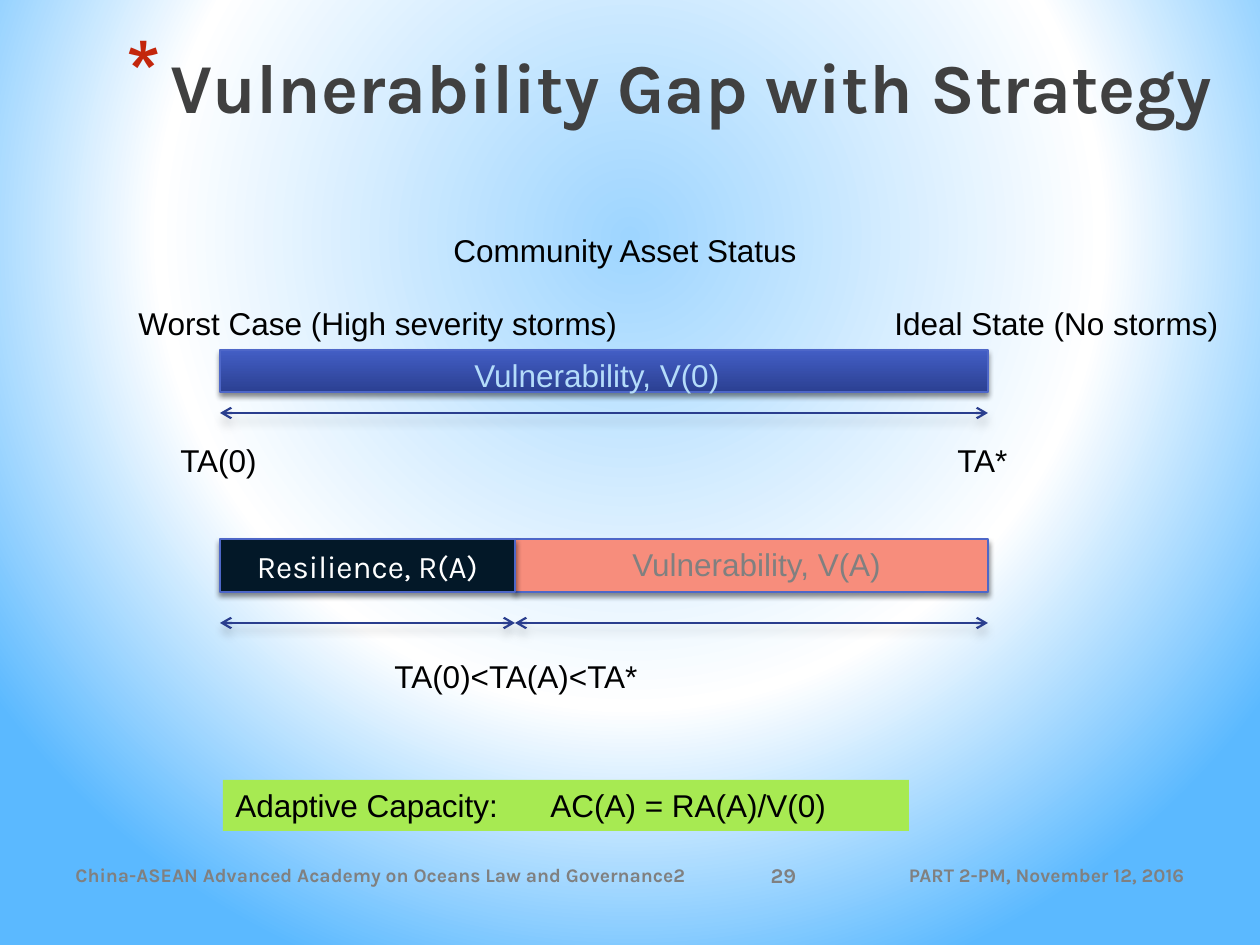
"""Build the vulnerability gap slide."""
from dataclasses import dataclass

from pptx import Presentation
from pptx.dml.color import RGBColor
from pptx.enum.shapes import MSO_CONNECTOR, MSO_SHAPE
from pptx.enum.text import MSO_ANCHOR, MSO_AUTO_SIZE, PP_ALIGN
from pptx.oxml import parse_xml
from pptx.oxml.ns import nsdecls, qn
from pptx.util import Emu, Pt

EMU_PER_PX = 914400 / 126
EMU_PER_PT = 12700


@dataclass(frozen=True)
class Theme:
    """Hold the colours, fonts and type sizes of the slide."""
    heading_font: str = "Karla"
    label_font: str = "Arial"
    title_size: int = 40
    label_size: int = 18
    number_size: int = 12
    footer_size: int = 11
    title: str = "404040"
    bullet: str = "C3260C"
    text: str = "000000"
    muted: str = "808080"
    pale: str = "B4DCFA"
    white: str = "FFFFFF"
    outline: str = "4E67C8"
    arrow: str = "2A3E8E"
    initial_gap: tuple = ("435EC5", "2B4092")
    remaining_gap: str = "F78D7C"
    resilience: str = "031828"
    capacity: str = "A7EA52"
    background: tuple = ((0, "9ED5FF"), (60, "FFFFFF"), (100, "5BB9FF"))


THEME = Theme()
BAR_LEFT, BAR_SPLIT, BAR_RIGHT = 220, 515, 988


def px(length):
    """Turn pixels into EMU."""
    return Emu(round(length * EMU_PER_PX))


def color(value):
    """Turn a hex string into a colour."""
    return RGBColor.from_string(value)


def add_span(para, text, size, ink, font=THEME.label_font, bold=False):
    """Append one formatted run to a paragraph."""
    span = para.add_run()
    span.text = text
    span.font.name = font
    span.font.size = Pt(size)
    span.font.bold = bold
    span.font.color.rgb = color(ink)


def add_shadow(element, alpha, blur, distance):
    """Give a shape or line a soft shadow that falls downwards."""
    element.spPr.append(parse_xml(
        f'<a:effectLst {nsdecls("a")}><a:outerShdw blurRad="{round(blur * EMU_PER_PT)}" '
        f'dist="{round(distance * EMU_PER_PT)}" dir="5400000" rotWithShape="0">'
        f'<a:srgbClr val="000000"><a:alpha val="{alpha * 1000}"/></a:srgbClr>'
        '</a:outerShdw></a:effectLst>'))


def paint_background(page):
    """Fill the page with a radial gradient."""
    page.background.fill.gradient()
    gradient = page.background._cSld.find(".//" + qn("a:gradFill"))
    stops = "".join(
        f'<a:gs pos="{position * 1000}"><a:srgbClr val="{value}"/></a:gs>'
        for position, value in THEME.background)
    gradient.getparent().replace(gradient, parse_xml(
        f'<a:gradFill {nsdecls("a")} rotWithShape="1"><a:gsLst>{stops}</a:gsLst>'
        '<a:path path="circle"><a:fillToRect l="20000" t="10000" r="20000" b="60000"/>'
        '</a:path></a:gradFill>'))


def set_title(page, text):
    """Place the title with its hanging asterisk."""
    title = page.shapes.title
    title.left, title.top, title.width, title.height = map(px, (44, 37, 1181, 157))
    frame = title.text_frame
    frame.auto_size = MSO_AUTO_SIZE.NONE
    frame.vertical_anchor = MSO_ANCHOR.TOP
    para = frame.paragraphs[0]
    para.alignment = PP_ALIGN.RIGHT
    properties = para._p.get_or_add_pPr()
    properties.set("marL", str(px(44)))
    properties.set("indent", str(-px(44)))
    for xml in (f'<a:buClr {nsdecls("a")}><a:srgbClr val="{THEME.bullet}"/></a:buClr>',
                f'<a:buSzPct {nsdecls("a")} val="128000"/>',
                f'<a:buChar {nsdecls("a")} char="*"/>'):
        properties.append(parse_xml(xml))
    add_span(para, text, THEME.title_size, THEME.title, THEME.heading_font, True)


def add_footer(page, text, left, width, alignment, size=THEME.footer_size):
    """Add one part of the footer line."""
    box = page.shapes.add_textbox(px(left), px(850), px(width), px(50))
    frame = box.text_frame
    frame.word_wrap = True
    frame.vertical_anchor = MSO_ANCHOR.MIDDLE
    para = frame.paragraphs[0]
    para.alignment = alignment
    add_span(para, text, size, THEME.muted, THEME.heading_font, True)


def add_label(page, text, left, top, width, ink=THEME.text, fill=None):
    """Add a one-line label that fits its text."""
    box = page.shapes.add_textbox(px(left), px(top), px(width), px(51))
    if fill:
        box.fill.solid()
        box.fill.fore_color.rgb = color(fill)
    frame = box.text_frame
    frame.word_wrap = False
    frame.auto_size = MSO_AUTO_SIZE.SHAPE_TO_FIT_TEXT
    add_span(frame.paragraphs[0], text, THEME.label_size, ink)


def add_bar(page, left, right, top, height, fill):
    """Add a shadowed bar with a plain or vertical gradient fill."""
    bar = page.shapes.add_shape(
        MSO_SHAPE.RECTANGLE, px(left), px(top), px(right - left), px(height))
    if isinstance(fill, tuple):
        bar.fill.gradient()
        bar.fill.gradient_angle = 270
        for stop, value, position in zip(bar.fill.gradient_stops, fill, (0, 1)):
            stop.color.rgb = color(value)
            stop.position = position
    else:
        bar.fill.solid()
        bar.fill.fore_color.rgb = color(fill)
    bar.line.color.rgb = color(THEME.outline)
    bar.line.width = Pt(0.75)
    add_shadow(bar._element, 45, 3.1, 1.8)
    return bar


def add_span_arrow(page, left, right, y):
    """Add a horizontal arrow with a head at both ends."""
    arrow = page.shapes.add_connector(
        MSO_CONNECTOR.STRAIGHT, px(left), px(y), px(right), px(y))
    arrow.line.color.rgb = color(THEME.arrow)
    arrow.line.width = Pt(1.25)
    for end in ("headEnd", "tailEnd"):
        arrow.line._ln.append(parse_xml(f'<a:{end} {nsdecls("a")} type="arrow"/>'))
    add_shadow(arrow._element, 20, 5, 4)


def main():
    """Build and save the deck."""
    deck = Presentation()
    deck.slide_width, deck.slide_height = px(1260), px(945)
    page = deck.slides.add_slide(deck.slide_layouts[5])
    paint_background(page)
    set_title(page, "Vulnerability Gap with Strategy")

    add_footer(page, "China-ASEAN Advanced Academy on Oceans Law and Governance2",
               63, 667, PP_ALIGN.LEFT)
    add_footer(page, "29", 740, 87, PP_ALIGN.CENTER, THEME.number_size)
    add_footer(page, "PART 2-PM, November 12, 2016", 850, 347, PP_ALIGN.RIGHT)

    add_bar(page, BAR_LEFT, BAR_RIGHT, 350, 42, THEME.initial_gap)
    add_bar(page, BAR_SPLIT, BAR_RIGHT, 539, 53, THEME.remaining_gap)
    resilience = add_bar(page, BAR_LEFT, BAR_SPLIT, 539, 53, THEME.resilience)
    frame = resilience.text_frame
    frame.vertical_anchor = MSO_ANCHOR.MIDDLE
    frame.paragraphs[0].alignment = PP_ALIGN.CENTER
    add_span(frame.paragraphs[0], "Resilience, R(A)", THEME.label_size,
             THEME.white, THEME.heading_font)

    for left, right, y in ((BAR_LEFT, BAR_RIGHT, 413),
                           (BAR_LEFT, BAR_SPLIT, 623),
                           (BAR_SPLIT, BAR_RIGHT, 623)):
        add_span_arrow(page, left, right, y)

    for text, left, top, width in (
            ("Community Asset Status", 441, 225, 372),
            ("Worst Case (High severity storms)", 126, 298, 509),
            ("Ideal State (No storms)", 882, 298, 361),
            ("TA(0)", 168, 435, 102),
            ("TA*", 945, 435, 76),
            ("TA(0)<TA(A)<TA*", 382, 651, 271)):
        add_label(page, text, left, top, width)
    add_label(page, "Vulnerability, V(0)", 462, 350, 275, THEME.pale)
    add_label(page, "Vulnerability, V(A)", 620, 539, 278, THEME.muted)
    add_label(page, "Adaptive Capacity:\tAC(A) = RA(A)/V(0)", 223, 780, 686,
              fill=THEME.capacity)
    deck.save("out.pptx")


if __name__ == "__main__":
    main()
